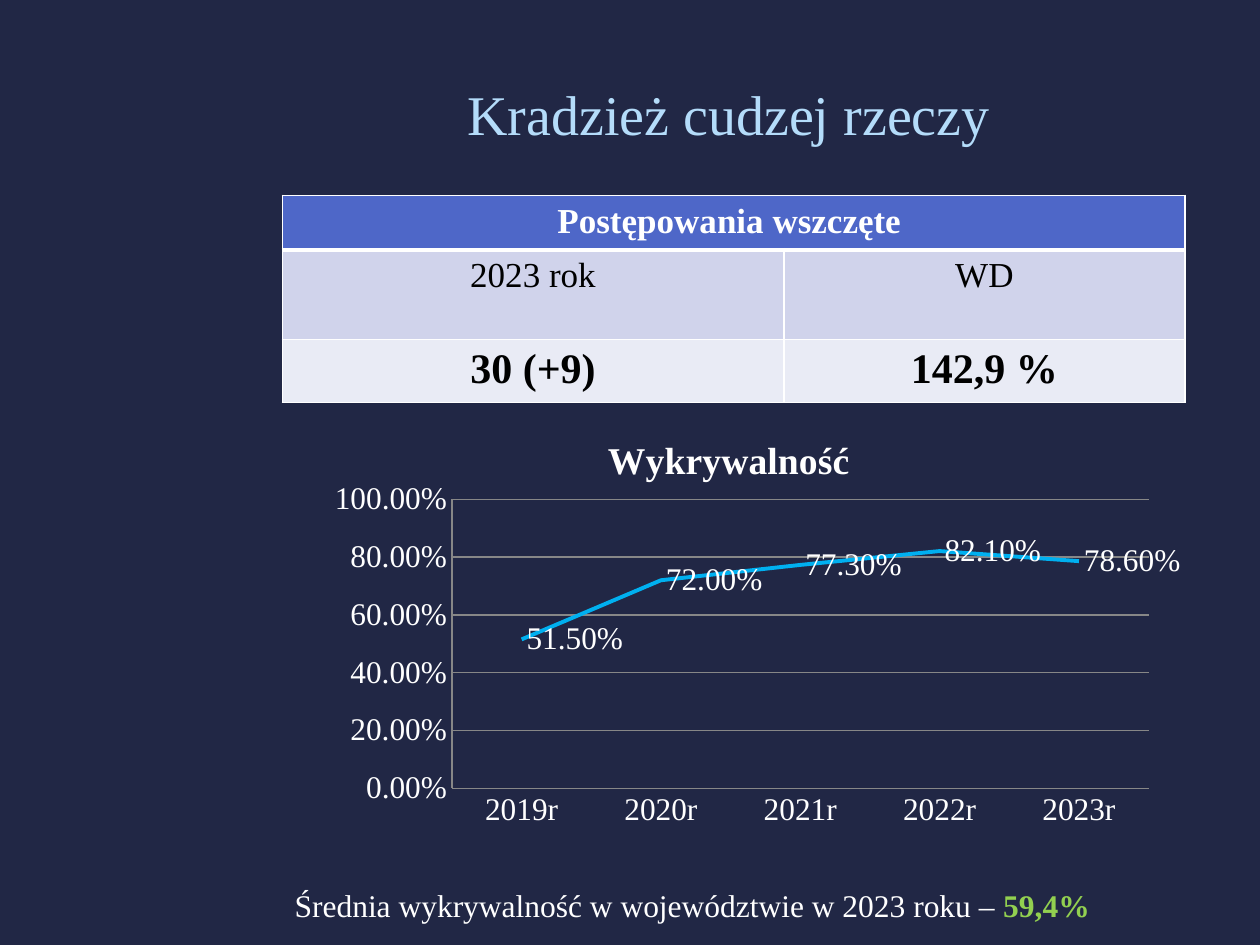
from dataclasses import dataclass

from lxml import etree
from pptx import Presentation
from pptx import util as u
from pptx.chart.data import CategoryChartData
from pptx.dml.color import RGBColor
from pptx.enum import chart as charts, text
from pptx.oxml.ns import qn


@dataclass(frozen=True)
class Theme:
    font: str = "Times New Roman"
    background: str = "212745"
    heading: str = "B4DCFA"
    white: str = "FFFFFF"
    black: str = "000000"
    header_fill: str = "4E67C8"
    label_fill: str = "D0D3EB"
    value_fill: str = "E9EBF5"
    line: str = "00B0F0"
    grid: str = "878787"
    accent: str = "92D050"
    title_size: float = 32
    value_size: float = 24
    chart_title_size: float = 21.6
    table_size: float = 20
    body_size: float = 18


theme = Theme()


def style(font, size=theme.body_size, color=theme.white, bold=False):
    font.name = theme.font
    font.size = u.Pt(size)
    font.bold = bold
    font.color.rgb = RGBColor.from_string(color)


def add_span(para, words, align=None, **font_format):
    span = para.add_run()
    span.text = words
    style(span.font, **font_format)
    para.alignment = align


deck = Presentation()
deck.slide_width, deck.slide_height = u.Cm(25.4), u.Cm(19.05)
page = deck.slides.add_slide(deck.slide_layouts[6])
page.background.fill.solid()
page.background.fill.fore_color.rgb = RGBColor.from_string(theme.background)
left = u.Cm(5.69)
content_width = u.Cm(18.11)
center = text.PP_ALIGN.CENTER

# Title
box = page.shapes.add_textbox(left, u.Cm(1.17), u.Cm(18.01), u.Cm(2.21))
box.text_frame.word_wrap = True
box.text_frame.vertical_anchor = text.MSO_ANCHOR.MIDDLE
add_span(box.text_frame.paragraphs[0], "Kradzież cudzej rzeczy", center,
         size=theme.title_size, color=theme.heading)

# Chart
chart_data = CategoryChartData(number_format="0.00%")
chart_data.categories = [f"{year}r" for year in range(2019, 2024)]
chart_data.add_series("Series 1", (0.515, 0.72, 0.773, 0.821, 0.786))
chart = page.shapes.add_chart(charts.XL_CHART_TYPE.LINE, left, u.Cm(8.33),
                              content_width, u.Cm(8.69), chart_data).chart
style(chart.font)
chart.has_legend = False
chart.has_title = True
add_span(chart.chart_title.text_frame.paragraphs[0], "Wykrywalność",
         size=theme.chart_title_size, bold=True)

value_axis = chart.value_axis
value_axis.minimum_scale, value_axis.maximum_scale = 0, 1
value_axis.major_unit = 0.2
value_axis.tick_labels.number_format = "0.00%"
value_axis.tick_labels.number_format_is_linked = False
for axis in (chart.category_axis, value_axis):
    axis.major_tick_mark = charts.XL_TICK_MARK.NONE
    axis.minor_tick_mark = charts.XL_TICK_MARK.NONE
    style(axis.tick_labels.font)
for line_format in (chart.category_axis.format.line, value_axis.format.line,
                    value_axis.major_gridlines.format.line):
    line_format.color.rgb = RGBColor.from_string(theme.grid)
    line_format.width = u.Pt(0.75)

plot = chart.plots[0]
plot.vary_by_categories = False
series = plot.series[0]
series.smooth = False
series.marker.style = charts.XL_MARKER_STYLE.NONE
series.format.line.color.rgb = RGBColor.from_string(theme.line)
series.format.line.width = u.Pt(2.25)
labels = series.data_labels
labels.show_value = True
labels.number_format = "0.00%"
labels.number_format_is_linked = False
labels.position = charts.XL_LABEL_POSITION.RIGHT
style(labels.font)

# Inner plot area as fractions of the chart
plot_area = chart.element.find(".//" + qn("c:plotArea"))
layout = plot_area.find(qn("c:layout"))
if layout is None:
    layout = etree.Element(qn("c:layout"))
    plot_area.insert(0, layout)
manual = etree.SubElement(layout, qn("c:manualLayout"))
for tag, setting in (("layoutTarget", "inner"), ("xMode", "edge"),
                     ("yMode", "edge"), ("x", 0.19), ("y", 0.2),
                     ("w", 0.78), ("h", 0.67)):
    etree.SubElement(manual, qn(f"c:{tag}")).set("val", str(setting))

# Table
rows = (
    (("Postępowania wszczęte ", ""), theme.header_fill, 0.97,
     dict(size=theme.table_size, bold=True)),
    (("2023 rok", "WD"), theme.label_fill, 1.8,
     dict(size=theme.table_size, color=theme.black)),
    (("30 (+9)", "142,9 %"), theme.value_fill, 1.12,
     dict(size=theme.value_size, color=theme.black, bold=True)),
)
table = page.shapes.add_table(len(rows), 2, left, u.Cm(3.94),
                              u.Cm(18.2), u.Cm(3.89)).table
table.first_row = table.horz_banding = False
for column, width in zip(table.columns, (10.11, 8.09)):
    column.width = u.Cm(width)
for row, (words, fill, height, font_format) in enumerate(rows):
    table.rows[row].height = u.Cm(height)
    for column, word in enumerate(words):
        cell = table.cell(row, column)
        properties = cell._tc.get_or_add_tcPr()
        for side in "LRTB":
            thick = (row, side) in ((0, "B"), (1, "T"))
            border = etree.SubElement(properties, qn(f"a:ln{side}"),
                                      w=str(u.Pt(3 if thick else 1)))
            paint = etree.SubElement(border, qn("a:solidFill"))
            etree.SubElement(paint, qn("a:srgbClr"), val=theme.white)
        cell.fill.solid()
        cell.fill.fore_color.rgb = RGBColor.from_string(fill)
        if word:
            add_span(cell.text_frame.paragraphs[0], word, center, **font_format)
table.cell(0, 0).merge(table.cell(0, 1))

# Regional average
box = page.shapes.add_textbox(left, u.Cm(17.73), content_width, u.Cm(1.02))
box.text_frame.word_wrap = True
para = box.text_frame.paragraphs[0]
add_span(para, "Średnia wykrywalność w województwie w 2023 roku – ")
add_span(para, "59,4%", color=theme.accent, bold=True)

deck.save("out.pptx")
